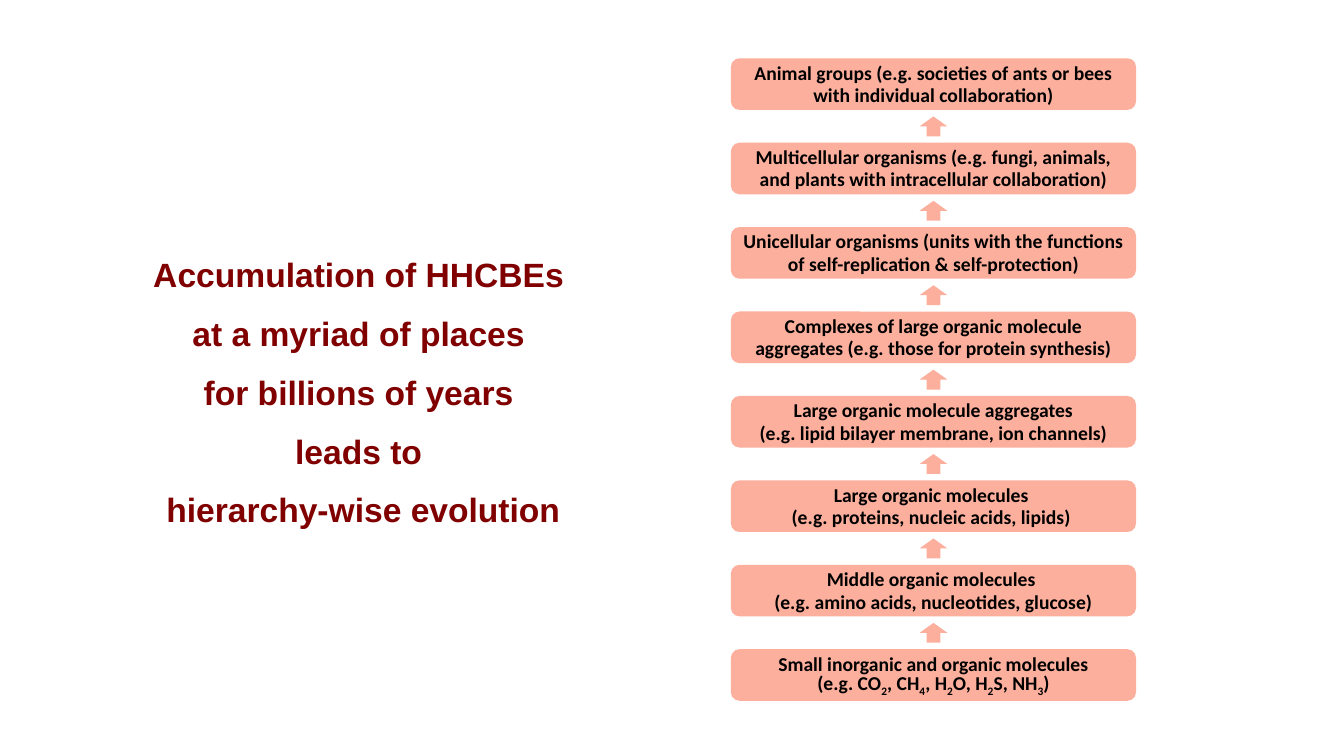
from lxml.etree import SubElement
from pptx import Presentation
from pptx.dml.color import RGBColor
from pptx.enum.shapes import MSO_SHAPE
from pptx.enum.text import MSO_ANCHOR, PP_ALIGN
from pptx.util import Cm, Pt

COLORS = {"title": "800000", "box": "FDAF9D", "label": "000000"}

TITLE = [
    "Accumulation of HHCBEs ",
    "at a myriad of places ",
    "for billions of years ",
    "leads to ",
    "hierarchy-wise evolution",
]

# Top to bottom; text between a pair of bars is subscript.
LEVELS = [
    ["Animal groups (e.g. societies of ants or bees with individual collaboration)"],
    ["Multicellular organisms (e.g. fungi, animals, and plants with intracellular collaboration)"],
    ["Unicellular organisms (units with the functions of self-replication & self-protection)"],
    ["Complexes of large organic molecule aggregates (e.g. those for protein synthesis)"],
    ["Large organic molecule aggregates", "(e.g. lipid bilayer membrane, ion channels)"],
    ["Large organic molecules ", "(e.g. proteins, nucleic acids, lipids) "],
    ["Middle organic molecules ", "(e.g. amino acids, nucleotides, glucose)"],
    ["Small inorganic and organic molecules",
     "(e.g. CO|2|, CH|4|, H|2|O, H|2|S, NH|3|)"],
]

BOX_LEFT, BOX_WIDTH, BOX_HEIGHT = 18.42, 10.21, 1.3
FIRST_TOP, LAST_TOP = 1.47, 16.36
ARROW_LENGTH, ARROW_SPAN = 0.5, 0.7


def write(frame, lines, font, size, spacing, color):
    """Fill a frame with bold centred lines, odd bar-split parts as subscript."""
    frame.word_wrap = True
    frame.vertical_anchor = MSO_ANCHOR.MIDDLE
    for i, line in enumerate(lines):
        para = frame.paragraphs[0] if i == 0 else frame.add_paragraph()
        para.alignment = PP_ALIGN.CENTER
        para.line_spacing = Pt(spacing)
        for j, part in enumerate(line.split("|")):
            run = para.add_run()
            run.text = part
            run.font.name = font
            run.font.size = Pt(size)
            run.font.bold = True
            run.font.color.rgb = RGBColor.from_string(COLORS[color])
            if j % 2:
                run.font._element.set("baseline", "-25000")


def add_block(slide, kind, left, top, width, height):
    """Add a flat shape in the box colour, without outline."""
    block = slide.shapes.add_shape(kind, Cm(left), Cm(top), Cm(width), Cm(height))
    block.shadow.inherit = False
    block.fill.solid()
    block.fill.fore_color.rgb = RGBColor.from_string(COLORS["box"])
    block.line.fill.background()
    return block


def add_level(slide, top, lines):
    box = add_block(slide, MSO_SHAPE.ROUNDED_RECTANGLE,
                    BOX_LEFT, top, BOX_WIDTH, BOX_HEIGHT)
    frame = box.text_frame
    frame.margin_left = frame.margin_right = Cm(0.2)
    frame.margin_top = frame.margin_bottom = 0
    write(frame, lines, "Calibri", 14, 16, "label")


def add_arrow(slide, middle):
    """Add an upward arrow centred on the boxes at the given height."""
    arrow = add_block(slide, MSO_SHAPE.RIGHT_ARROW,
                      BOX_LEFT + (BOX_WIDTH - ARROW_LENGTH) / 2,
                      middle - ARROW_SPAN / 2, ARROW_LENGTH, ARROW_SPAN)
    arrow.rotation = 270


def main():
    deck = Presentation()
    deck.slide_width, deck.slide_height = Cm(33.87), Cm(19.05)
    slide = deck.slides.add_slide(deck.slide_layouts[6])

    title = slide.shapes.add_textbox(Cm(3.3), Cm(4.24), Cm(11.71), Cm(10.8))
    write(title.text_frame, TITLE, "Arial", 24, 42, "title")

    pitch = (LAST_TOP - FIRST_TOP) / (len(LEVELS) - 1)
    for i, lines in enumerate(LEVELS):
        top = FIRST_TOP + i * pitch
        add_level(slide, top, lines)
        if i:
            add_arrow(slide, top - (pitch - BOX_HEIGHT) / 2)

    deck.save("out.pptx")


if __name__ == "__main__":
    main()
